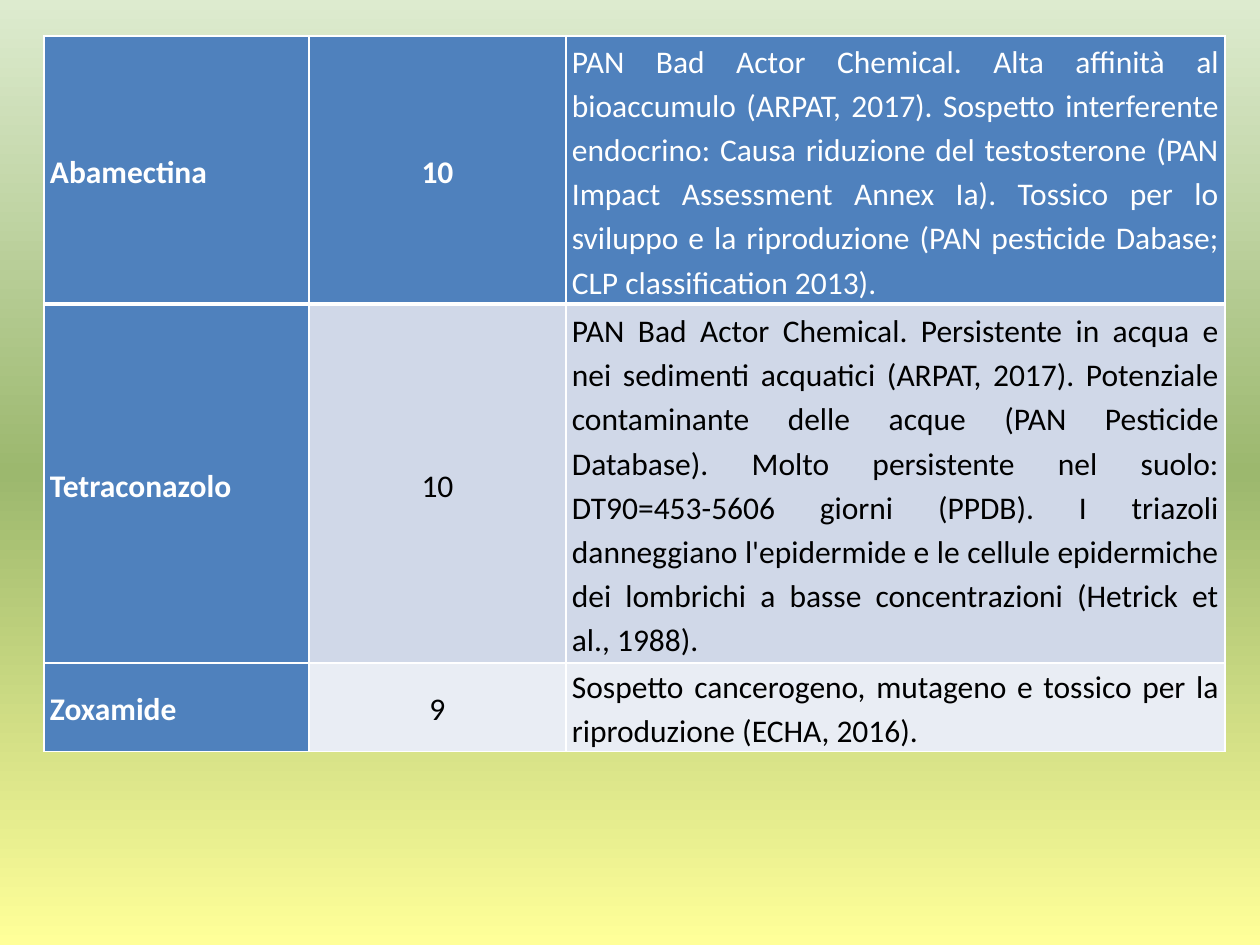
import copy

import pptx
import pptx.dml.color
import pptx.enum.text
import pptx.oxml
import pptx.oxml.ns
import pptx.util

RGBColor = pptx.dml.color.RGBColor
PP_ALIGN = pptx.enum.text.PP_ALIGN

EMU_PER_PX = 914400 / 126
WHITE = RGBColor(0xFF, 0xFF, 0xFF)
BLACK = RGBColor(0x00, 0x00, 0x00)
BLUE = RGBColor(0x4F, 0x81, 0xBD)
BAND_DARK = RGBColor(0xD0, 0xD8, 0xE8)
BAND_LIGHT = RGBColor(0xE9, 0xED, 0xF4)
BACKGROUND_STOPS = [
    (0, RGBColor(0xDD, 0xEB, 0xCF)),
    (0.5, RGBColor(0x9C, 0xB8, 0x6E)),
    (1, RGBColor(0xFF, 0xFF, 0x99)),
]

TABLE_LEFT, TABLE_TOP = 44, 36
COLUMN_WIDTHS = [265, 257, 659]
ROW_HEIGHTS = [268, 359, 88]
ALIGNMENTS = [PP_ALIGN.JUSTIFY, PP_ALIGN.CENTER, PP_ALIGN.JUSTIFY]
ROW_FILLS = [BLUE, BAND_DARK, BAND_LIGHT]
PESTICIDES = [
    ("Abamectina", "10",
     "PAN Bad Actor Chemical. Alta affinità al bioaccumulo (ARPAT, 2017). "
     "Sospetto interferente endocrino: Causa riduzione del testosterone "
     "(PAN Impact Assessment Annex Ia). Tossico per lo sviluppo e la "
     "riproduzione (PAN pesticide Dabase; CLP classification 2013)."),
    ("Tetraconazolo", "10",
     "PAN Bad Actor Chemical. Persistente in acqua e nei sedimenti acquatici "
     "(ARPAT, 2017). Potenziale contaminante delle acque (PAN Pesticide "
     "Database). Molto persistente nel suolo: DT90=453-5606 giorni (PPDB). "
     "I triazoli danneggiano l'epidermide e le cellule epidermiche dei "
     "lombrichi a basse concentrazioni (Hetrick et al., 1988)."),
    ("Zoxamide", "9",
     "Sospetto cancerogeno, mutageno e tossico per la riproduzione "
     "(ECHA, 2016)."),
]


def px(length):
    return pptx.util.Emu(round(length * EMU_PER_PX))


def set_background(slide):
    fill = slide.background.fill
    fill.gradient()
    fill.gradient_angle = 270
    stop_list = slide.element.find(".//" + pptx.oxml.ns.qn("a:gsLst"))
    stop_list.insert(1, copy.deepcopy(stop_list[0]))
    for stop, (position, color) in zip(fill.gradient_stops, BACKGROUND_STOPS):
        stop.position = position
        stop.color.rgb = color


def write_text(text_frame, text, *, color, bold, alignment):
    paragraph = text_frame.paragraphs[0]
    paragraph.alignment = alignment
    paragraph.line_spacing = 1.15
    run = paragraph.add_run()
    run.text = text
    run.font.name = "Calibri"
    run.font.size = pptx.util.Pt(18)
    run.font.bold = bold
    run.font.color.rgb = color


def set_borders(cell, bottom_width):
    properties = cell._tc.get_or_add_tcPr()
    widths = {"lnL": 1, "lnR": 1, "lnT": 1, "lnB": bottom_width}
    for index, (side, width) in enumerate(widths.items()):
        border = pptx.oxml.parse_xml(
            f'<a:{side} {pptx.oxml.ns.nsdecls("a")} w="{pptx.util.Pt(width)}">'
            f'<a:solidFill><a:srgbClr val="{WHITE}"/></a:solidFill></a:{side}>'
        )
        properties.insert(index, border)


def format_cell(cell, fill_color, bottom_width):
    cell.vertical_anchor = pptx.enum.text.MSO_ANCHOR.MIDDLE
    cell.margin_left = cell.margin_right = px(6)
    cell.margin_top = cell.margin_bottom = 0
    cell.fill.solid()
    cell.fill.fore_color.rgb = fill_color
    set_borders(cell, bottom_width)


def add_pesticide_table(slide):
    table = slide.shapes.add_table(
        len(ROW_HEIGHTS), len(COLUMN_WIDTHS), px(TABLE_LEFT), px(TABLE_TOP),
        px(sum(COLUMN_WIDTHS)), px(sum(ROW_HEIGHTS)),
    ).table
    table.first_col = True
    for column, width in zip(table.columns, COLUMN_WIDTHS):
        column.width = px(width)
    for row, height in zip(table.rows, ROW_HEIGHTS):
        row.height = px(height)
    for row_index, texts in enumerate(PESTICIDES):
        is_first_row = row_index == 0
        for column_index, text in enumerate(texts):
            is_name = column_index == 0
            cell = table.cell(row_index, column_index)
            format_cell(cell, BLUE if is_name else ROW_FILLS[row_index],
                        3 if is_first_row else 1)
            write_text(cell.text_frame, text,
                       color=WHITE if is_first_row or is_name else BLACK,
                       bold=is_name or (is_first_row and column_index == 1),
                       alignment=ALIGNMENTS[column_index])


def main():
    presentation = pptx.Presentation()
    presentation.slide_width = px(1260)
    presentation.slide_height = px(945)
    slide = presentation.slides.add_slide(presentation.slide_layouts[6])
    set_background(slide)
    add_pesticide_table(slide)
    presentation.save("out.pptx")


if __name__ == "__main__":
    main()
